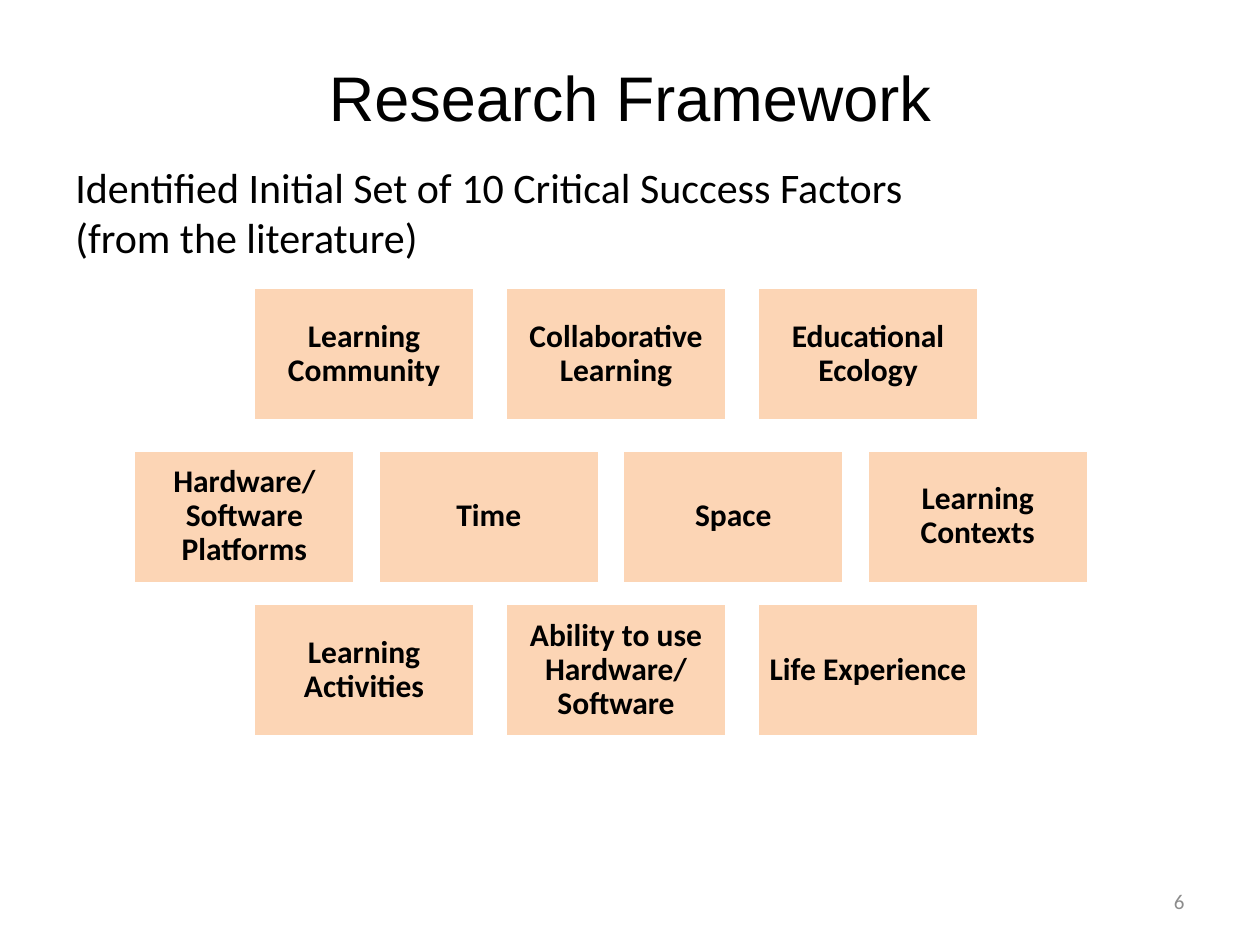
from pptx import Presentation
from pptx.dml.color import RGBColor
from pptx.enum.shapes import MSO_SHAPE
from pptx.enum.text import MSO_ANCHOR, PP_ALIGN
from pptx.util import Inches, Pt

COLORS = {"text": "000000", "number": "8C8C8C", "box": "FCD5B5", "border": "FFFFFF"}
BOX_WIDTH, BOX_HEIGHT = 1.76, 1.06

# Each row: left of the first box, top, distance between lefts, labels
FACTOR_ROWS = [
    (2.01, 2.28, 2.0, ["Learning Community", "Collaborative Learning", "Educational Ecology"]),
    (1.06, 3.57, 1.94, ["Hardware/ Software Platforms", "Time", "Space", "Learning Contexts"]),
    (2.01, 4.79, 2.0, ["Learning Activities", "Ability to use Hardware/ Software", "Life Experience"]),
]


def write_text(shape, text, size, font="Calibri", color="text", align=PP_ALIGN.LEFT,
               anchor=MSO_ANCHOR.MIDDLE, bold=False):
    """Fill the shape with one wrapped, formatted paragraph and return it."""
    text_frame = shape.text_frame
    text_frame.word_wrap = True
    text_frame.vertical_anchor = anchor
    text_frame.text = text
    paragraph = text_frame.paragraphs[0]
    paragraph.alignment = align
    run_font = paragraph.runs[0].font
    run_font.name = font
    run_font.size = Pt(size)
    run_font.bold = bold
    run_font.color.rgb = RGBColor.from_string(COLORS[color])
    return paragraph


presentation = Presentation()
presentation.slide_width = Inches(10)
presentation.slide_height = Inches(7.5)
slide = presentation.slides.add_slide(presentation.slide_layouts[6])

title = slide.shapes.add_textbox(Inches(0.5), Inches(0.3), Inches(9), Inches(0.93))
write_text(title, "Research Framework", 36, font="Arial", align=PP_ALIGN.CENTER)

slide_number = slide.shapes.add_textbox(Inches(7.15), Inches(6.95), Inches(2.35), Inches(0.4))
write_text(slide_number, "6", 12, color="number", align=PP_ALIGN.RIGHT)

introduction = slide.shapes.add_textbox(Inches(0.5), Inches(1.23), Inches(7.33), Inches(0.91))
write_text(introduction,
           "Identified Initial Set of 10 Critical Success Factors (from the literature)",
           24, anchor=MSO_ANCHOR.TOP)

for left, top, step, labels in FACTOR_ROWS:
    for column, label in enumerate(labels):
        box = slide.shapes.add_shape(
            MSO_SHAPE.RECTANGLE, Inches(left + column * step), Inches(top),
            Inches(BOX_WIDTH), Inches(BOX_HEIGHT))
        box.shadow.inherit = False
        box.fill.solid()
        box.fill.fore_color.rgb = RGBColor.from_string(COLORS["box"])
        box.line.color.rgb = RGBColor.from_string(COLORS["border"])
        box.line.width = Pt(2)
        text_frame = box.text_frame
        text_frame.margin_left = text_frame.margin_right = Inches(0.06)
        text_frame.margin_top = text_frame.margin_bottom = Inches(0.06)
        paragraph = write_text(box, label, 18, align=PP_ALIGN.CENTER, bold=True)
        paragraph.line_spacing = 0.9

presentation.save("out.pptx")
